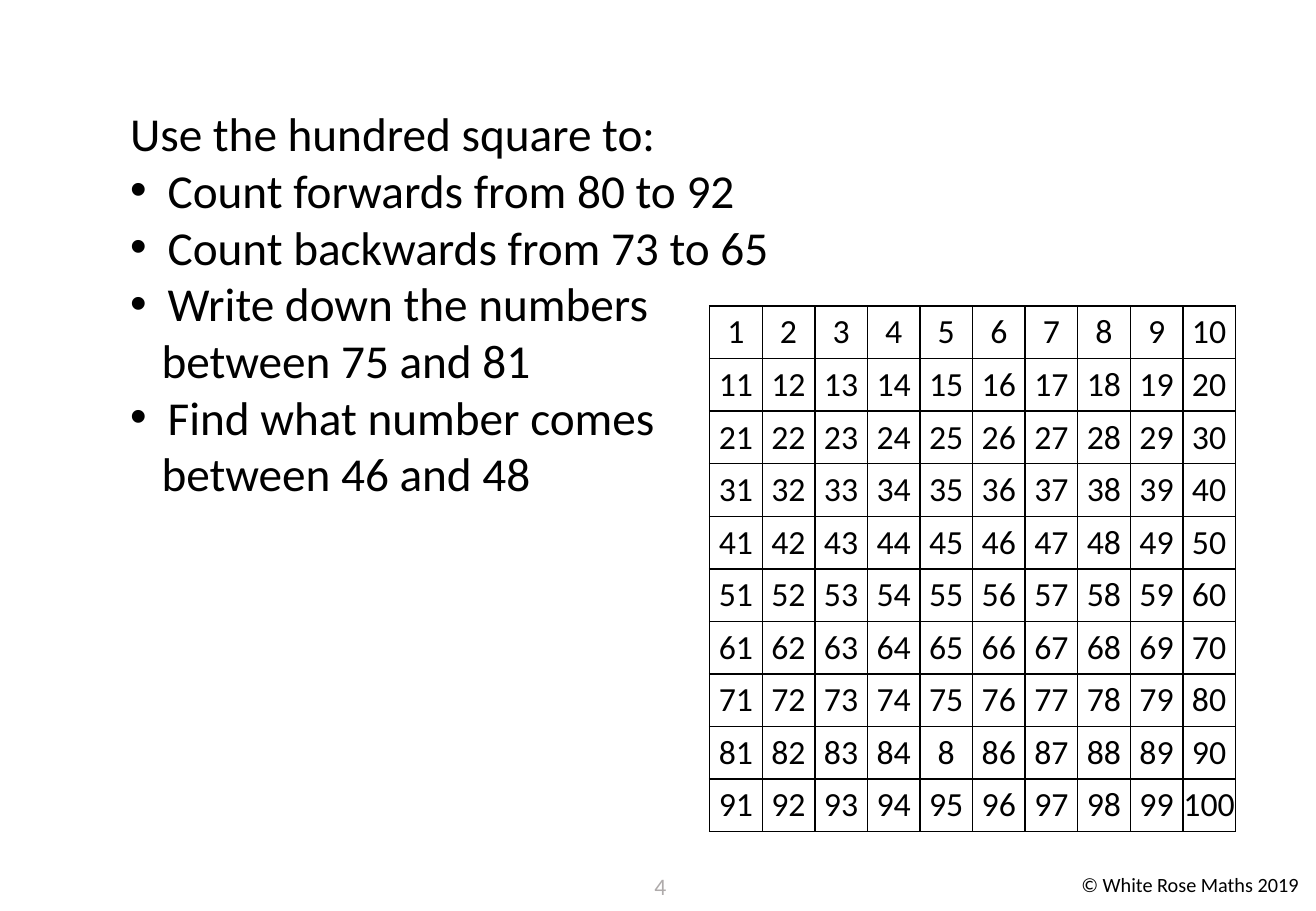
from lxml import etree
from pptx import Presentation
from pptx.dml.color import RGBColor
from pptx.enum.text import MSO_ANCHOR, MSO_AUTO_SIZE, PP_ALIGN
from pptx.oxml.ns import qn
from pptx.util import Pt

PX = 9144  # 100 px to the inch
FONT = "Calibri"
COLORS = {"text": "000000", "grid": "000000", "page": "AFABAB"}
CENTER, LEFT = PP_ALIGN.CENTER, PP_ALIGN.LEFT
TOP, MIDDLE = MSO_ANCHOR.TOP, MSO_ANCHOR.MIDDLE
NO_FIT = MSO_AUTO_SIZE.NONE

BULLET_INDENT, CONTINUED_INDENT = 31, 26
# (text, left indent in px, has bullet)
TASKS = [
    ("Use the hundred square to:", 0, False),
    ("Count forwards from 80 to 92", BULLET_INDENT, True),
    ("Count backwards from 73 to 65", BULLET_INDENT, True),
    ("Write down the numbers", BULLET_INDENT, True),
    ("between 75 and 81", CONTINUED_INDENT, False),
    ("Find what number comes", BULLET_INDENT, True),
    ("between 46 and 48", CONTINUED_INDENT, False),
]
GRID_SIZE = 10
CELL_TEXT = {85: "8"}  # the cell for 85 shows only its first digit


def emu(box):
    return [n * PX for n in box]


def add_run(p, text, size, color="text", align=LEFT):
    p.alignment = align
    r = p.add_run()
    r.text = text
    r.font.name, r.font.size = FONT, Pt(size)
    r.font.color.rgb = RGBColor.from_string(COLORS[color])


def set_bullet(p, indent, bulleted):
    pPr = p._p.get_or_add_pPr()
    pPr.set("marL", str(indent * PX))
    pPr.set("indent", str(-indent * PX if bulleted else 0))
    if bulleted:
        etree.SubElement(pPr, qn("a:buFont"), typeface="Arial")
        etree.SubElement(pPr, qn("a:buChar"), char="•")
    else:
        etree.SubElement(pPr, qn("a:buNone"))


def set_borders(cell):
    tcPr = cell._tc.get_or_add_tcPr()
    for i, side in enumerate(("a:lnL", "a:lnR", "a:lnT", "a:lnB")):
        ln = etree.Element(qn(side), w=str(Pt(1)))
        fill = etree.SubElement(ln, qn("a:solidFill"))
        etree.SubElement(fill, qn("a:srgbClr"), val=COLORS["grid"])
        tcPr.insert(i, ln)


def add_tasks(s, box):
    sp = s.placeholders[1]
    sp.left, sp.top, sp.width, sp.height = emu(box)
    tf = sp.text_frame
    tf.word_wrap, tf.auto_size, tf.vertical_anchor = True, NO_FIT, TOP
    for i, (text, indent, bulleted) in enumerate(TASKS):
        p = tf.add_paragraph() if i else tf.paragraphs[0]
        set_bullet(p, indent, bulleted)
        p.space_before = Pt(0)
        add_run(p, text, 28)


def add_hundred_square(s, box):
    left, top, width, height = emu(box)
    table = s.shapes.add_table(GRID_SIZE, GRID_SIZE, left, top, width, height).table
    table.first_row = table.horz_banding = False
    for col in table.columns:
        col.width = width // GRID_SIZE
    for row in table.rows:
        row.height = height // GRID_SIZE
    for number, cell in enumerate(table.iter_cells(), 1):
        cell.margin_left = cell.margin_right = 0
        cell.margin_top = cell.margin_bottom = 0
        cell.vertical_anchor = MIDDLE
        cell.fill.background()
        set_borders(cell)
        text = CELL_TEXT.get(number, str(number))
        add_run(cell.text_frame.paragraphs[0], text, 20, align=CENTER)


def add_label(s, box, text, size, color="text", align=LEFT):
    tf = s.shapes.add_textbox(*emu(box)).text_frame
    tf.word_wrap = True
    add_run(tf.paragraphs[0], text, size, color, align)


def main():
    prs = Presentation()
    prs.slide_width, prs.slide_height = emu((1083, 750))
    s = prs.slides.add_slide(prs.slide_layouts[1])
    title = s.shapes.title._element
    title.getparent().remove(title)

    # Footer
    add_label(s, (880, 713, 271, 30), "© White Rose Maths 2019", 12)
    add_label(s, (518, 713, 51, 40), "4", 14, "page", CENTER)
    # Task list and number grid
    add_tasks(s, (97, 81, 881, 576))
    add_hundred_square(s, (584, 252, 433, 433))
    prs.save("out.pptx")


if __name__ == "__main__":
    main()
